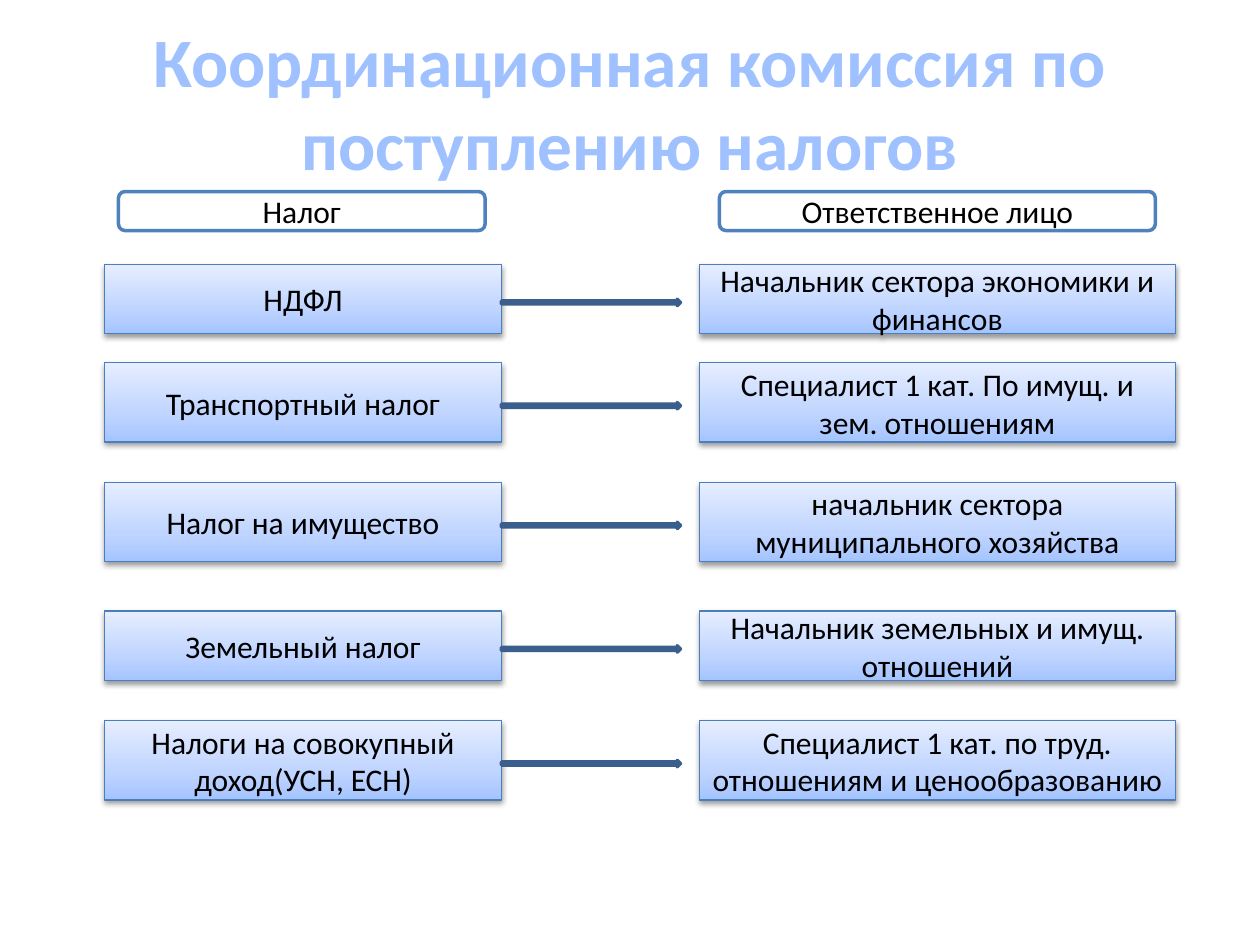
from copy import deepcopy

from lxml import etree
from pptx import Presentation
from pptx.dml.color import RGBColor
from pptx.enum.shapes import MSO_SHAPE
from pptx.enum.text import MSO_ANCHOR, MSO_AUTO_SIZE, PP_ALIGN
from pptx.oxml import parse_xml
from pptx.oxml.ns import nsdecls, qn
from pptx.util import Inches, Pt

RECTANGLE = MSO_SHAPE.RECTANGLE
ROUNDED = MSO_SHAPE.ROUNDED_RECTANGLE
ARROW = MSO_SHAPE.RIGHT_ARROW
CENTER = PP_ALIGN.CENTER
MIDDLE = MSO_ANCHOR.MIDDLE
NO_AUTOFIT = MSO_AUTO_SIZE.NONE
TITLE_ONLY = 5

COLORS = {
    "title": "A0C1FF",
    "text": "000000",
    "white": "FFFFFF",
    "accent": "4F81BD",
    "box_line": "4B7EBC",
    "arrow_line": "3A5F8C",
    "shadow": "000000",
    "deep": "A4C4FF",
    "medium": "BFD4FF",
    "pale": "E6EEFF",
}
BOX_STOPS = [(0, "deep"), (0.35, "medium"), (1, "pale")]

TAX_LEFT, TAX_WIDTH = 0.83, 3.15
PERSON_LEFT, PERSON_WIDTH = 5.55, 3.78
ARROW_WIDTH, ARROW_HEIGHT = 1.42, 0.05
HEADERS = [("Налог", 0.94, 2.91), ("Ответственное лицо", 5.71, 3.46)]
ROWS = [
    (2.1, 0.55, "НДФЛ", "Начальник сектора экономики и финансов"),
    (2.88, 0.63, "Транспортный налог", "Специалист 1 кат. По имущ. и зем. отношениям"),
    (3.83, 0.63, "Налог на имущество", "начальник сектора муниципального хозяйства"),
    (4.85, 0.55, "Земельный налог", "Начальник земельных и имущ. отношений"),
    (5.72, 0.63, "Налоги на совокупный доход(УСН, ЕСН)",
     "Специалист 1 кат. по труд. отношениям и ценообразованию"),
]


def rgb(name):
    return RGBColor.from_string(COLORS[name])


def write_text(shape, text, size=18, color="text", bold=False):
    frame = shape.text_frame
    frame.word_wrap = True
    frame.auto_size = NO_AUTOFIT
    frame.vertical_anchor = MIDDLE
    paragraph = frame.paragraphs[0]
    paragraph.alignment = CENTER
    run = paragraph.add_run()
    run.text = text
    run.font.name = "Calibri"
    run.font.size = Pt(size)
    run.font.bold = bold
    run.font.color.rgb = rgb(color)


def add_outlined_shape(slide, kind, box, line, line_width, fill=None):
    shape = slide.shapes.add_shape(kind, *(Inches(value) for value in box))
    shape.shadow.inherit = False
    shape.line.color.rgb = rgb(line)
    shape.line.width = Pt(line_width)
    if fill:
        shape.fill.solid()
        shape.fill.fore_color.rgb = rgb(fill)
    return shape


def apply_box_gradient(shape):
    shape.fill.gradient()
    shape.fill.gradient_angle = 90
    stop_list = shape._element.spPr.find(".//" + qn("a:gsLst"))
    stop_list.append(deepcopy(stop_list[0]))
    for stop, (position, color) in zip(shape.fill.gradient_stops, BOX_STOPS):
        stop.position = position
        stop.color.rgb = rgb(color)


def apply_box_shadow(shape):
    effects = shape._element.spPr.find(qn("a:effectLst"))
    effects.append(parse_xml(
        f'<a:outerShdw {nsdecls("a")} blurRad="{Pt(3.1)}" dist="{Pt(1.6)}" '
        'dir="5400000" rotWithShape="0"/>'))
    color = etree.SubElement(effects[0], qn("a:srgbClr"), val=COLORS["shadow"])
    etree.SubElement(color, qn("a:alpha"), val="38000")


def add_title(slide, text, box):
    title = slide.shapes.title
    title.left, title.top, title.width, title.height = (Inches(value) for value in box)
    write_text(title, text, size=39.6, color="title", bold=True)


def add_header(slide, text, box):
    shape = add_outlined_shape(slide, ROUNDED, box, "accent", 2, fill="white")
    write_text(shape, text)


def add_box(slide, text, box):
    shape = add_outlined_shape(slide, RECTANGLE, box, "box_line", 0.75)
    apply_box_gradient(shape)
    apply_box_shadow(shape)
    write_text(shape, text)


def add_row(slide, top, height, tax, person):
    add_box(slide, tax, (TAX_LEFT, top, TAX_WIDTH, height))
    add_box(slide, person, (PERSON_LEFT, top, PERSON_WIDTH, height))
    arrow_box = (TAX_LEFT + TAX_WIDTH, top + height / 2, ARROW_WIDTH, ARROW_HEIGHT)
    add_outlined_shape(slide, ARROW, arrow_box, "arrow_line", 2, fill="accent")


def main():
    presentation = Presentation()
    presentation.slide_width = Inches(10)
    presentation.slide_height = Inches(7.5)
    slide = presentation.slides.add_slide(presentation.slide_layouts[TITLE_ONLY])
    add_title(slide, "Координационная комиссия по поступлению налогов", (0.5, 0.3, 9, 1.01))
    for text, left, width in HEADERS:
        add_header(slide, text, (left, 1.52, width, 0.31))
    for row in ROWS:
        add_row(slide, *row)
    presentation.save("out.pptx")


if __name__ == "__main__":
    main()
